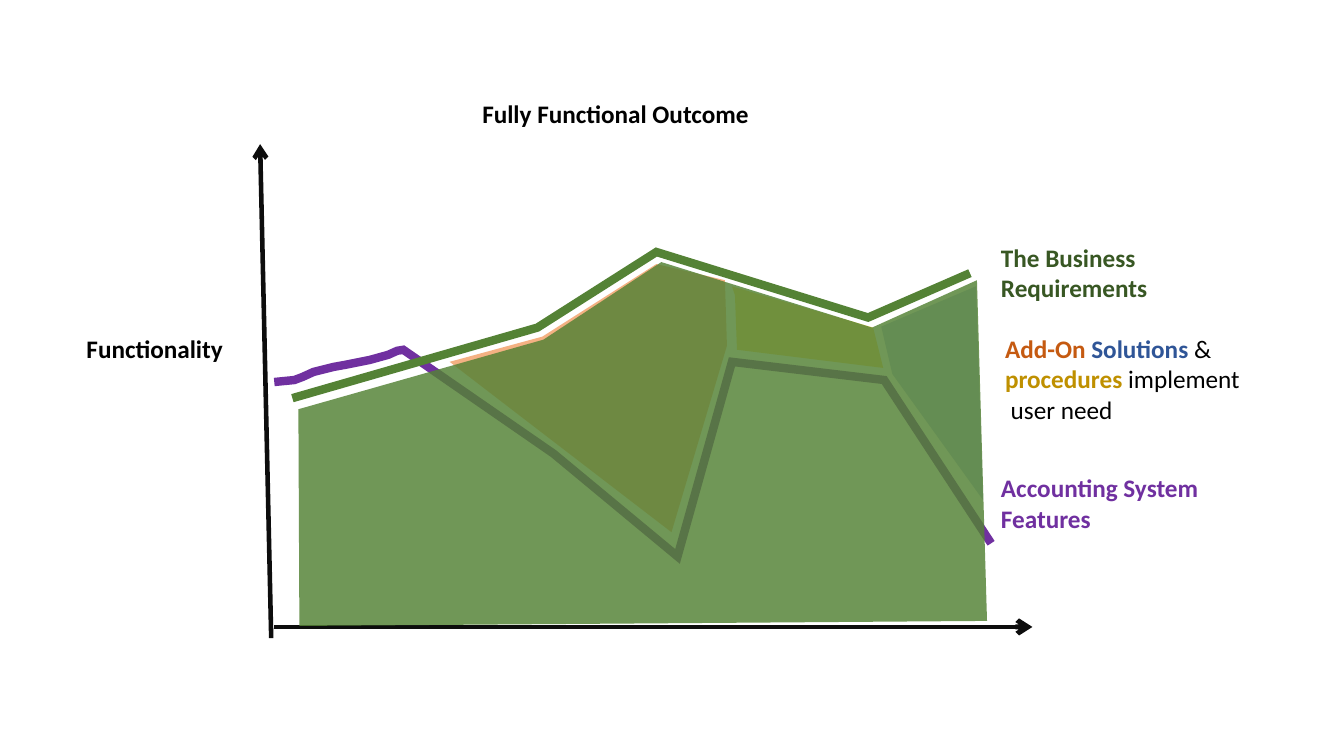
from lxml.etree import SubElement
from pptx import Presentation
from pptx.dml.color import RGBColor
from pptx.enum.shapes import MSO_CONNECTOR as Connector
from pptx.enum.text import MSO_ANCHOR as Anchor, MSO_AUTO_SIZE as AutoSize, PP_ALIGN as Align
from pptx.oxml.ns import qn
from pptx.util import Inches, Pt

BLACK = RGBColor(0x00, 0x00, 0x00)
AXIS = RGBColor(0x0D, 0x0D, 0x0D)
PURPLE = RGBColor(0x70, 0x30, 0xA0)
GREEN = RGBColor(0x54, 0x82, 0x35)
DARK_GREEN = RGBColor(0x38, 0x57, 0x23)
ORANGE = RGBColor(0xC5, 0x5A, 0x11)
BLUE = RGBColor(0x2F, 0x55, 0x97)
GOLD = RGBColor(0xBF, 0x90, 0x00)
PALE_ORANGE = RGBColor(0xF4, 0xB1, 0x83)
PALE_GOLD = RGBColor(0xFF, 0xD9, 0x66)
PALE_BLUE = RGBColor(0xB4, 0xC7, 0xE7)

FEATURES = [(27.2, 37.9), (28.2, 37.8), (29.2, 37.7), (30, 37.4), (31.1, 36.9),
            (33.1, 36.4), (34.2, 36.2), (36.7, 35.7), (38.5, 35.2), (39.4, 34.8),
            (40, 34.7), (54.9, 45), (67.2, 55.2), (72.6, 35.9), (87.7, 37.7), (98.3, 53.9)]
REQUIREMENTS = [(29, 39.5), (53.3, 32.5), (65.1, 25), (86.1, 31.5), (96.2, 27.1)]
ADD_ONS = [(44.6, 35.9), (53.8, 33.4), (65.1, 26.2), (71.9, 27.8), (72.1, 34.3), (66.6, 52.8)]
PROCEDURES = [(72.6, 28.4), (86.6, 32.5), (87.6, 36.5), (73.1, 34.7), (72.9, 29.3)]
SOLUTIONS = [(87.4, 32.4), (96.8, 28.4), (97.5, 49.6), (88.5, 37.1)]
OUTCOME = [(29.6, 40.6), (53.9, 33.7), (65.6, 26), (86.5, 32.5), (96.9, 27.8),
           (97.9, 61.6), (29.7, 62.1)]


class OutcomeSlide:
    font_name = "Calibri"
    font_size = Pt(18)
    cell = Inches(0.1)

    def __init__(self, presentation):
        self.slide = presentation.slides.add_slide(presentation.slide_layouts[5])
        self.shapes = self.slide.shapes

    def grid(self, *cells):
        return [round(count * self.cell) for count in cells]

    def style_font(self, font, color, bold=True):
        font.name, font.size, font.bold = self.font_name, self.font_size, bold
        font.color.rgb = color

    def title(self, text, *box):
        title = self.shapes.title
        title.left, title.top, title.width, title.height = self.grid(*box)
        frame = title.text_frame
        frame.text = text
        frame.word_wrap = False
        frame.auto_size = AutoSize.NONE
        frame.vertical_anchor = Anchor.TOP
        paragraph = frame.paragraphs[0]
        paragraph.alignment = Align.CENTER
        self.style_font(paragraph.font, BLACK)

    def axis(self, start, end, weight):
        connector = self.shapes.add_connector(
            Connector.STRAIGHT, *self.grid(*start), *self.grid(*end))
        connector.line.color.rgb = AXIS
        connector.line.width = Pt(weight)
        SubElement(connector.line._get_or_add_ln(), qn("a:tailEnd")).set("type", "arrow")
        SubElement(connector._element.spPr, qn("a:effectLst"))

    def outline(self, points, close):
        start, *rest = [self.grid(*point) for point in points]
        builder = self.shapes.build_freeform(*start)
        builder.add_line_segments(rest, close=close)
        shape = builder.convert_to_shape()
        shape.shadow.inherit = False
        return shape

    def curve(self, points, color):
        shape = self.outline(points, False)
        shape.fill.background()
        shape.line.color.rgb = color
        shape.line.width = Pt(6)
        SubElement(shape.line._get_or_add_ln(), qn("a:miter")).set("lim", "800000")

    def area(self, points, color, opacity=100):
        shape = self.outline(points, True)
        shape.fill.solid()
        shape.fill.fore_color.rgb = color
        shape.line.fill.background()
        if opacity < 100:
            fill = shape._element.spPr.find(qn("a:solidFill"))
            SubElement(fill[0], qn("a:alpha")).set("val", str(opacity * 1000))

    def label(self, lines, color, *box):
        frame = self.shapes.add_textbox(*self.grid(*box)).text_frame
        frame.word_wrap = False
        frame.auto_size = AutoSize.SHAPE_TO_FIT_TEXT
        for index, line in enumerate(lines):
            paragraph = frame.add_paragraph() if index else frame.paragraphs[0]
            if isinstance(line, str):
                paragraph.text = line
                self.style_font(paragraph.font, color)
                continue
            for text, run_color, bold in line:
                run = paragraph.add_run()
                run.text = text
                self.style_font(run.font, run_color, bold)


def main():
    presentation = Presentation()
    presentation.slide_width, presentation.slide_height = Inches(13.33), Inches(7.5)
    page = OutcomeSlide(presentation)

    page.title("Fully Functional Outcome", 46.7, 9.3, 28.7, 4)
    page.axis((26.9, 63.3), (25.8, 14.3), 3.25)
    page.axis((27.2, 62.2), (102.4, 62.2), 3.5)
    page.curve(FEATURES, PURPLE)
    page.label(["Functionality"], BLACK, 7.6, 32.6, 15.7, 4)
    page.curve(REQUIREMENTS, GREEN)
    page.label(["Accounting System", "Features"], PURPLE, 98.3, 46.4, 22.3, 7.1)
    page.label(["The Business", "Requirements"], DARK_GREEN, 98.3, 23.5, 16.6, 7.1)
    page.area(ADD_ONS, PALE_ORANGE)
    page.area(PROCEDURES, PALE_GOLD)
    page.area(SOLUTIONS, PALE_BLUE)
    page.label([
        [("Add-On ", ORANGE, True), ("Solutions", BLUE, True), (" &", BLACK, False)],
        [("procedures", GOLD, True), (" implement", BLACK, False)],
        [(" user need", BLACK, False)],
    ], BLACK, 98.7, 32.6, 25.4, 10.1)
    page.area(OUTCOME, GREEN, 83)

    presentation.save("out.pptx")


if __name__ == "__main__":
    main()
